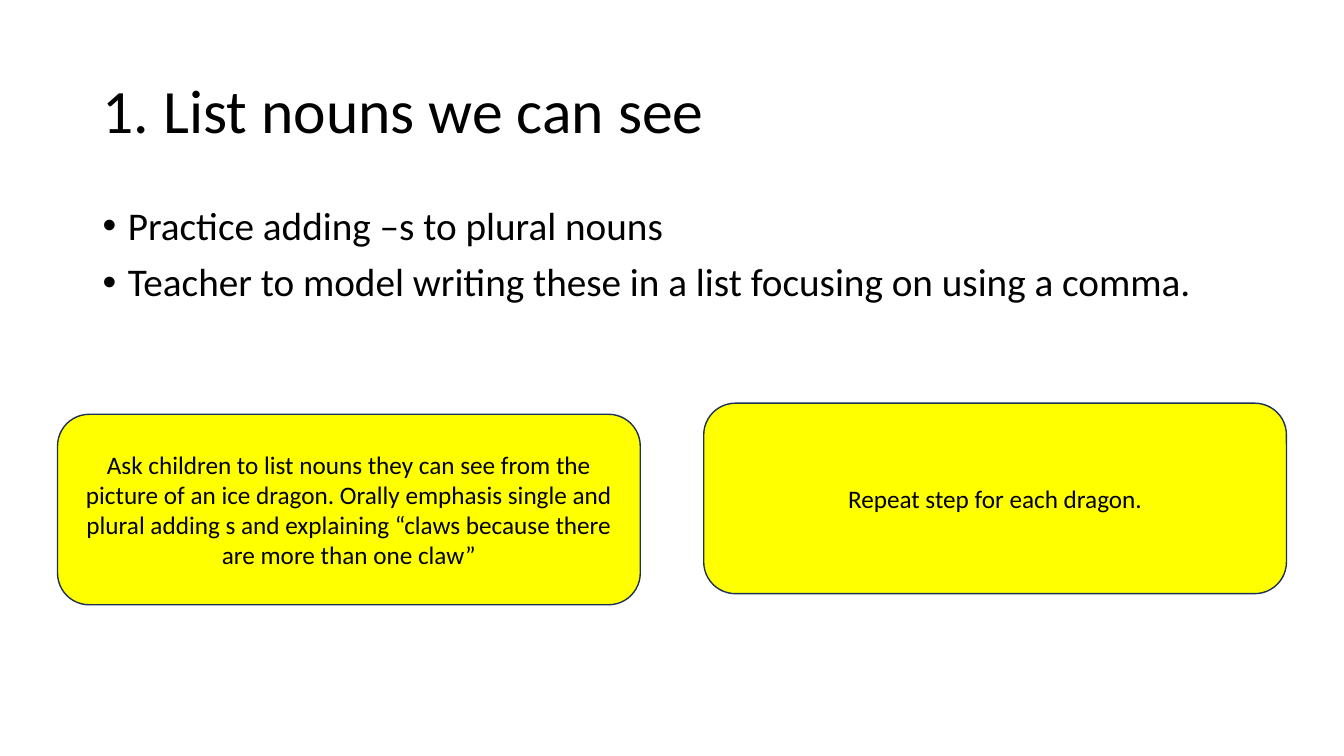
from lxml import etree
from pptx import Presentation
from pptx.dml.color import RGBColor
from pptx.enum.shapes import MSO_SHAPE
from pptx.enum.text import MSO_ANCHOR, PP_ALIGN
from pptx.oxml.ns import qn
from pptx.util import Inches, Pt

ROUNDED = MSO_SHAPE.ROUNDED_RECTANGLE
TOP, MIDDLE = MSO_ANCHOR.TOP, MSO_ANCHOR.MIDDLE
LEFT, CENTER = PP_ALIGN.LEFT, PP_ALIGN.CENTER

WIDTH, HEIGHT = Inches(13.33), Inches(7.5)
FONT = "Calibri"
BLACK, YELLOW, NAVY = "000000", "FFFF00", "1E3256"

MARGIN, CONTENT_WIDTH = 6.9, 86.27
CARD_WIDTH, CARD_HEIGHT = 43.36, 25.2
CARDS = [
    (4.28, 54.8, "Ask children to list nouns they can see from the picture of an "
     "ice dragon. Orally emphasis single and plural adding s and explaining "
     "“claws because there are more than one claw”"),
    (52.36, 53.33, "Repeat step for each dragon."),
]
POINTS = [
    "Practice adding –s to plural nouns",
    "Teacher to model writing these in a list focusing on using a comma.",
]


def color(value):
    return RGBColor.from_string(value)


def place(x, y, w, h):
    return [int(share * size / 100)
            for share, size in zip((x, y, w, h), (WIDTH, HEIGHT) * 2)]


def write(sp, text, size, anchor, align, spacing=1.0):
    tf = sp.text_frame
    tf.word_wrap = True
    tf.vertical_anchor = anchor
    tf.text = text
    for p in tf.paragraphs:
        p.alignment = align
        p.line_spacing = spacing
        for r in p.runs:
            r.font.name = FONT
            r.font.size = Pt(size)
            r.font.color.rgb = color(BLACK)


def add_text(slide, box, text, size, anchor):
    sp = slide.shapes.add_textbox(*place(*box))
    write(sp, text, size, anchor, LEFT, 0.9)
    return sp


def add_bullets(slide, box, points, size):
    sp = add_text(slide, box, "\n".join(points), size, TOP)
    for i, p in enumerate(sp.text_frame.paragraphs):
        if i:
            p.space_before = Pt(10)
        pPr = p._p.get_or_add_pPr()
        pPr.set("marL", str(Inches(0.25)))
        pPr.set("indent", str(-Inches(0.25)))
        etree.SubElement(pPr, qn("a:buFont"), typeface="Arial")
        etree.SubElement(pPr, qn("a:buChar"), char="•")


def add_card(slide, x, y, text):
    sp = slide.shapes.add_shape(ROUNDED, *place(x, y, CARD_WIDTH, CARD_HEIGHT))
    sp.shadow.inherit = False
    sp.fill.solid()
    sp.fill.fore_color.rgb = color(YELLOW)
    sp.line.color.rgb = color(NAVY)
    sp.line.width = Pt(1)
    write(sp, text, 18, MIDDLE, CENTER)


def main():
    prs = Presentation()
    prs.slide_width, prs.slide_height = WIDTH, HEIGHT
    slide = prs.slides.add_slide(prs.slide_layouts[6])
    add_text(slide, (MARGIN, 5.33, CONTENT_WIDTH, 19.33),
             "1. List nouns we can see", 44, MIDDLE)
    add_bullets(slide, (MARGIN, 26.67, CONTENT_WIDTH, 63.47), POINTS, 28)
    for x, y, text in CARDS:
        add_card(slide, x, y, text)
    prs.save("out.pptx")


if __name__ == "__main__":
    main()
